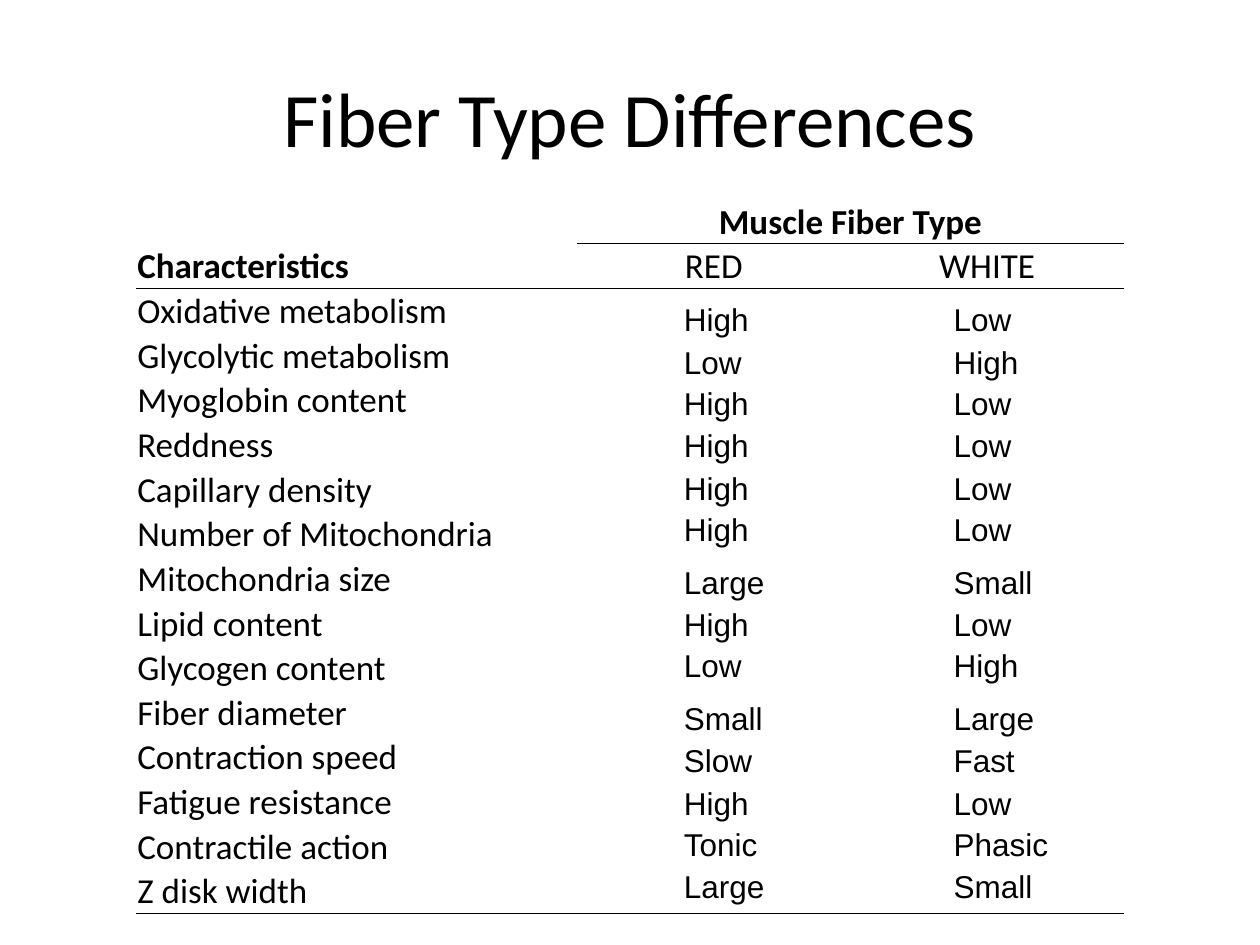
from lxml import etree
from pptx import Presentation
from pptx import oxml
from pptx import util as u
from pptx.dml.color import RGBColor
from pptx.enum import text
from pptx.oxml import ns

COLORS = {"ink": "000000", "paper": "FFFFFF"}
CHARACTERISTICS = [
    ("Oxidative metabolism", "High", "Low", 2.33),
    ("Glycolytic metabolism", "Low", "High", 2.67),
    ("Myoglobin content", "High", "Low", 3),
    ("Reddness", "High", "Low", 3.33),
    ("Capillary density", "High", "Low", 3.67),
    ("Number of Mitochondria", "High", "Low", 4),
    ("Mitochondria size", "Large", "Small", 4.42),
    ("Lipid content", "High", "Low", 4.75),
    ("Glycogen content", "Low", "High", 5.08),
    ("Fiber diameter", "Small", "Large", 5.5),
    ("Contraction speed", "Slow", "Fast", 5.83),
    ("Fatigue resistance", "High", "Low", 6.17),
    ("Contractile action", "Tonic", "Phasic", 6.5),
    ("Z disk width", "Large", "Small", 6.83),
]


def style_paragraph(paragraph, name, size, bold=False, align=text.PP_ALIGN.LEFT):
    paragraph.alignment = align
    font = paragraph.font
    font.name, font.size, font.bold = name, u.Pt(size), bold
    font.color.rgb = RGBColor.from_string(COLORS["ink"])


def set_borders(cell, ruled_edges):
    properties = cell._tc.get_or_add_tcPr()
    for position, edge in enumerate("LRTB"):
        fill = "<a:noFill/>"
        if edge in ruled_edges:
            fill = f'<a:solidFill><a:srgbClr val="{COLORS["ink"]}"/></a:solidFill>'
        line = f'<a:ln{edge} {ns.nsdecls("a")} w="{u.Pt(0.5)}">{fill}</a:ln{edge}>'
        properties.insert(position, oxml.parse_xml(line))


presentation = Presentation()
presentation.slide_width, presentation.slide_height = u.Inches(10), u.Inches(7.5)
slide = presentation.slides.add_slide(presentation.slide_layouts[6])

title = slide.shapes.add_textbox(u.Inches(0.5), u.Inches(0.3), u.Inches(9), u.Inches(1.25))
title.text_frame.word_wrap = True
title.text_frame.vertical_anchor = text.MSO_ANCHOR.MIDDLE
title.text_frame.text = "Fiber Type Differences"
style_paragraph(title.text_frame.paragraphs[0], "Calibri", 44, align=text.PP_ALIGN.CENTER)

rows = [("", "Muscle Fiber Type", ""), ("Characteristics", "RED", "WHITE")]
rows += [(name, "", "") for name, *_ in CHARACTERISTICS]
last = len(rows) - 1
frame = slide.shapes.add_table(
    len(rows), 3, u.Inches(1.08), u.Inches(1.58), u.Inches(7.83), u.Inches(5.67))
table = frame.table
table.first_row = table.horz_banding = False
for column, width in zip(table.columns, (3.5, 2.17, 2.17)):
    column.width = u.Inches(width)

for row, labels in enumerate(rows):
    for column, label in enumerate(labels):
        cell = table.cell(row, column)
        cell.text = label
        cell.margin_left = cell.margin_right = cell.margin_top = u.Inches(0.01)
        cell.margin_bottom = 0
        cell.vertical_anchor = text.MSO_ANCHOR.BOTTOM
        cell.fill.solid()
        cell.fill.fore_color.rgb = RGBColor.from_string(COLORS["paper"])
        align = text.PP_ALIGN.CENTER if column else text.PP_ALIGN.LEFT
        bold = label in ("Muscle Fiber Type", "Characteristics")
        style_paragraph(cell.text_frame.paragraphs[0], "Calibri", 20, bold, align)
        ruled_edges = ""
        if row == 2 or (row == 1 and column):
            ruled_edges += "T"
        if row in (1, last) or (row == 0 and column):
            ruled_edges += "B"
        set_borders(cell, ruled_edges)
table.cell(0, 1).merge(table.cell(0, 2))

for name, red, white, top in CHARACTERISTICS:
    width = 3.17 if white == "Phasic" else 3
    box = slide.shapes.add_textbox(u.Inches(5.33), u.Inches(top), u.Inches(width), u.Inches(0.4))
    box.text_frame.word_wrap = True
    box.text_frame.auto_size = text.MSO_AUTO_SIZE.SHAPE_TO_FIT_TEXT
    box.text_frame.text = f"{red}\t{white}"
    paragraph = box.text_frame.paragraphs[0]
    style_paragraph(paragraph, "Arial", 18)
    tabs = etree.Element(ns.qn("a:tabLst"))
    etree.SubElement(tabs, ns.qn("a:tab"), pos=str(u.Inches(2.14)), algn="l")
    paragraph._p.get_or_add_pPr().insert(0, tabs)

presentation.save("out.pptx")
